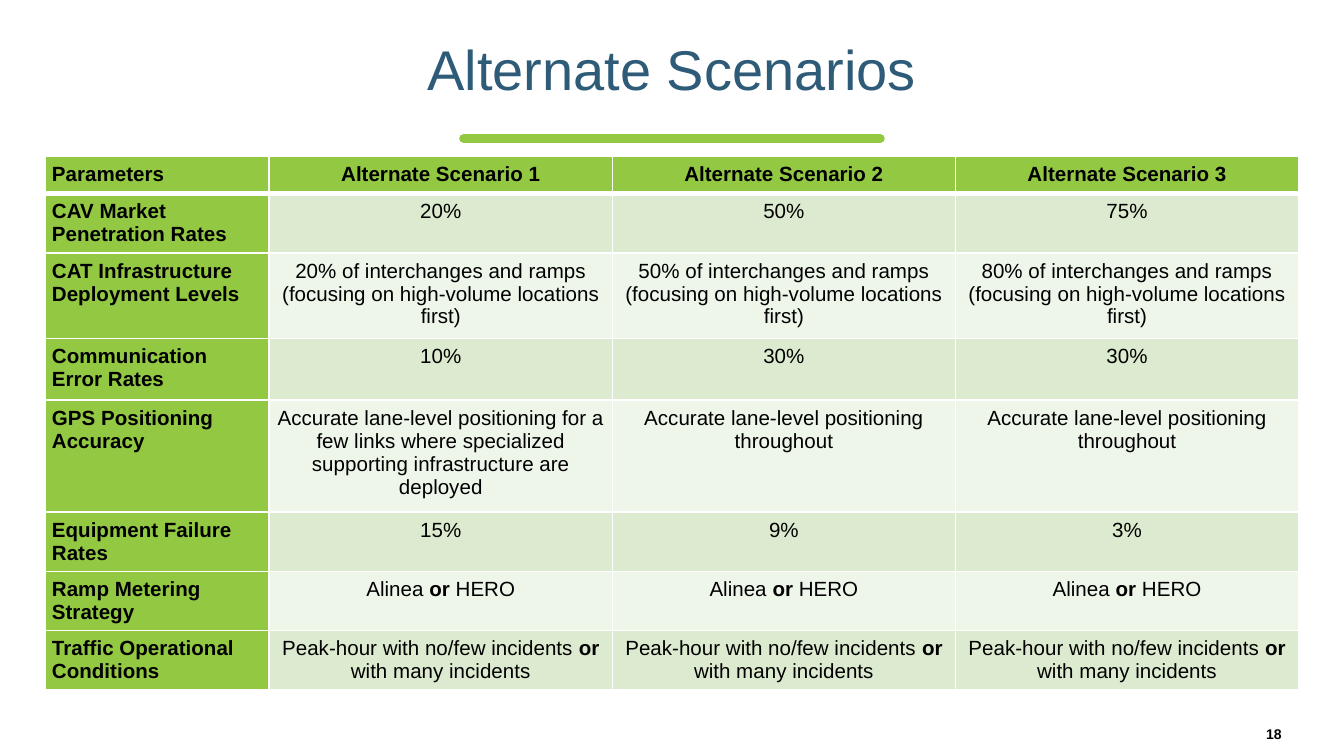
from lxml.etree import SubElement as Sub
from pptx import Presentation
from pptx.dml.color import RGBColor as RGB
from pptx.enum.shapes import MSO_CONNECTOR as Conn
from pptx.enum.text import MSO_ANCHOR as Anchor, PP_ALIGN as Align
from pptx.oxml.ns import qn
from pptx.util import Pt

GREEN = RGB(0x93, 0xC8, 0x43)
PALE = RGB(0xDC, 0xEB, 0xCF)
LIGHT = RGB(0xEE, 0xF5, 0xE9)
WHITE = RGB(0xFF, 0xFF, 0xFF)
BLACK = RGB(0x00, 0x00, 0x00)
BLUE = RGB(0x2E, 0x5B, 0x78)

RAMP = "Alinea *or* HERO"
PEAK = "Peak-hour with no/few incidents *or* with many incidents"
FOCUS = "of interchanges and ramps (focusing on high-volume locations first)"
LANE = "Accurate lane-level positioning"
ROWS = [
    (20, "Parameters", *[f"Alternate Scenario {n}" for n in (1, 2, 3)]),
    (30, "CAV Market Penetration Rates", "20%", "50%", "75%"),
    (46, "CAT Infrastructure Deployment Levels",
     *[f"{share}% {FOCUS}" for share in (20, 50, 80)]),
    (33, "Communication Error Rates", "10%", "30%", "30%"),
    (60, "GPS Positioning Accuracy",
     f"{LANE} for a few links where specialized supporting infrastructure are deployed",
     f"{LANE} throughout", f"{LANE} throughout"),
    (29, "Equipment Failure Rates", "15%", "9%", "3%"),
    (30, "Ramp Metering Strategy", RAMP, RAMP, RAMP),
    (30, "Traffic Operational Conditions", PEAK, PEAK, PEAK),
]


def style(para, size, color, bold, align):
    para.alignment = align
    font = para.font
    font.name, font.size, font.bold = "Arial", Pt(size), bold
    font.color.rgb = color


def add_title(slide, left, top, width, height):
    title = slide.shapes.title
    title.left, title.top = Pt(left), Pt(top)
    title.width, title.height = Pt(width), Pt(height)
    frame = title.text_frame
    frame.text = "Alternate Scenarios"
    frame.vertical_anchor = Anchor.MIDDLE
    para = frame.paragraphs[0]
    para.line_spacing = 0.9
    style(para, 30, BLUE, False, Align.CENTER)


def add_rule(slide, left, top, width):
    rule = slide.shapes.add_connector(
        Conn.STRAIGHT, Pt(left), Pt(top), Pt(left + width), Pt(top))
    rule.line.color.rgb = GREEN
    rule.line.width = Pt(5)
    rule.line._ln.set("cap", "rnd")
    Sub(rule._element.spPr, qn("a:effectLst"))


def add_edges(cell, head):
    props = cell._tc.get_or_add_tcPr()
    for side in "LRTB":
        width = Pt(3 if head and side == "B" else 1)
        line = Sub(props, qn(f"a:ln{side}"), w=str(width))
        Sub(Sub(line, qn("a:solidFill")), qn("a:srgbClr"), val=str(WHITE))


def fill_cell(cell, text, row, col):
    add_edges(cell, row == 0)
    cell.fill.solid()
    if row == 0 or col == 0:
        cell.fill.fore_color.rgb = GREEN
    else:
        cell.fill.fore_color.rgb = PALE if row % 2 else LIGHT
    cell.margin_left = cell.margin_right = Pt(3.6)
    cell.margin_top = cell.margin_bottom = Pt(3.6)
    para = cell.text_frame.paragraphs[0]
    style(para, 11, BLACK, row == 0 or col == 0,
          Align.CENTER if col else Align.LEFT)
    for i, part in enumerate(text.split("*")):
        run = para.add_run()
        run.text = part
        if i % 2:
            run.font.bold = True


def add_grid(slide, left, top, width):
    high = sum(row[0] for row in ROWS)
    grid = slide.shapes.add_table(
        len(ROWS), 4, Pt(left), Pt(top), Pt(width), Pt(high)).table
    grid.first_row = grid.horz_banding = False
    first = 120
    for col, item in enumerate(grid.columns):
        item.width = Pt((width - first) / 3 if col else first)
    for row, (tall, *texts) in enumerate(ROWS):
        grid.rows[row].height = Pt(tall)
        for col, text in enumerate(texts):
            fill_cell(grid.cell(row, col), text, row, col)


def add_number(slide, left, top, width, height):
    box = slide.shapes.add_textbox(Pt(left), Pt(top), Pt(width), Pt(height))
    frame = box.text_frame
    frame.word_wrap = True
    frame.text = "18"
    style(frame.paragraphs[0], 7.5, BLACK, True, Align.CENTER)


def main():
    deck = Presentation()
    deck.slide_width, deck.slide_height = Pt(720), Pt(405)
    slide = deck.slides.add_slide(deck.slide_layouts[5])
    left, width = 24.25, 671.5
    add_rule(slide, 248.5, 74.25, 223)
    add_grid(slide, left, 83.75, width)
    add_title(slide, left, 15, width, 48)
    add_number(slide, 641, 385, 83, 17)
    deck.save("out.pptx")


if __name__ == "__main__":
    main()
